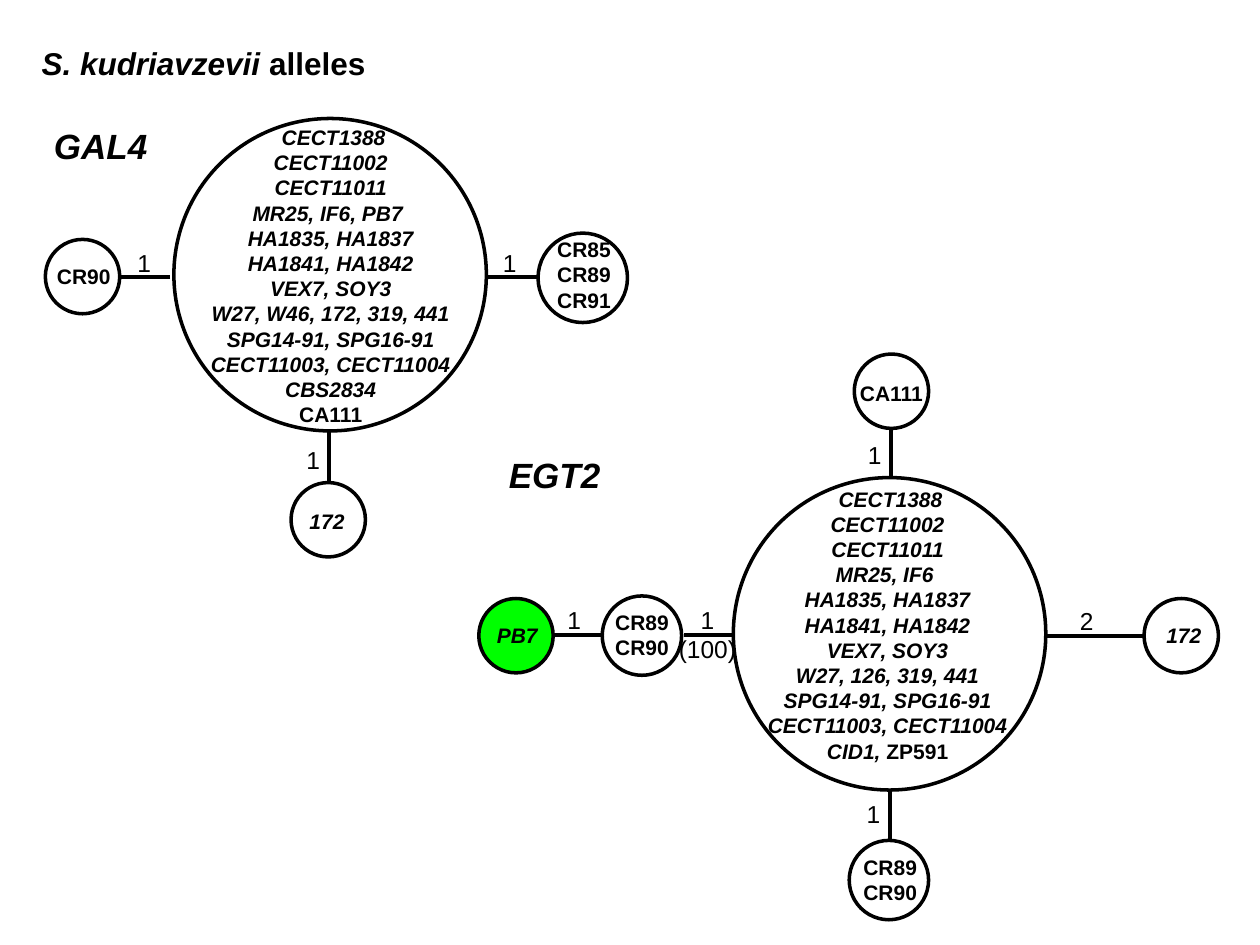
from dataclasses import dataclass

from lxml import etree
from pptx import Presentation
from pptx.dml.color import RGBColor
from pptx.enum.shapes import MSO_CONNECTOR, MSO_SHAPE
from pptx.enum.text import MSO_ANCHOR, MSO_AUTO_SIZE, PP_ALIGN
from pptx.oxml.ns import qn
from pptx.util import Inches, Pt

CIRCLE = MSO_SHAPE.OVAL
STRAIGHT = MSO_CONNECTOR.STRAIGHT
TOP = MSO_ANCHOR.TOP
FIXED_SIZE = MSO_AUTO_SIZE.NONE
LEFT, CENTER = PP_ALIGN.LEFT, PP_ALIGN.CENTER


@dataclass(frozen=True)
class Theme:
    font: str = "Arial"
    black: RGBColor = RGBColor(0, 0, 0)
    white: RGBColor = RGBColor(255, 255, 255)
    green: RGBColor = RGBColor(0, 255, 0)
    title: int = 18
    gene: int = 20
    strain: int = 12
    steps: int = 14
    outline: float = 2
    branch: float = 2.25


THEME = Theme()
HUB = 2.48
SMALL, MEDIUM, LARGE = 0.59, 0.63, 0.71  # circle diameters
LABEL_WIDTH, HUB_LABEL_WIDTH = 0.71, 2.17

SHARED_FIRST = [" CECT1388", "CECT11002", "CECT11011"]
SHARED_MIDDLE = ["HA1835, HA1837", "HA1841, HA1842", "VEX7, SOY3"]
SHARED_LAST = ["SPG14-91, SPG16-91", "CECT11003, CECT11004"]


def write(frame, lines, size, bold=True, italic=True, align=CENTER):
    """Fill a frame; a line is a string or a list of (text, italic) runs."""
    for index, line in enumerate(lines):
        paragraph = frame.paragraphs[0] if index == 0 else frame.add_paragraph()
        paragraph.alignment = align
        font = paragraph.font
        font.name, font.size = THEME.font, Pt(size)
        font.bold = bold
        font.color.rgb = THEME.black
        if isinstance(line, str):
            font.italic = italic
            paragraph.add_run().text = line
        else:
            for text, slanted in line:
                run = paragraph.add_run()
                run.text = text
                run.font.italic = slanted


def add_text(shapes, left, top, width, height, lines, size, **style):
    box = shapes.add_textbox(Inches(left), Inches(top), Inches(width), Inches(height))
    box.text_frame.word_wrap = True
    write(box.text_frame, lines, size, **style)


def add_gene(shapes, left, top, width, name):
    add_text(shapes, left, top, width, 0.44, [name], THEME.gene, align=LEFT)


def add_steps(shapes, left, top, text, width=0.73, height=0.34, align=CENTER):
    add_text(shapes, left, top, width, height, [text], THEME.steps,
             bold=False, italic=False, align=align)


def add_branch(shapes, x1, y1, x2, y2):
    branch = shapes.add_connector(STRAIGHT, Inches(x1), Inches(y1), Inches(x2), Inches(y2))
    branch.line.color.rgb = THEME.black
    branch.line.width = Pt(THEME.branch)
    etree.SubElement(branch._element.spPr, qn("a:effectLst"))


def add_allele(shapes, left, top, diameter, label_at, strains,
               fill=None, italic=False, label_width=LABEL_WIDTH):
    """Draw an allele circle and the list of strains that carry it."""
    circle = shapes.add_shape(CIRCLE, Inches(left), Inches(top),
                              Inches(diameter), Inches(diameter))
    circle.shadow.inherit = False
    if fill is None:
        circle.fill.background()
    else:
        circle.fill.solid()
        circle.fill.fore_color.rgb = fill
    circle.line.color.rgb = THEME.black
    circle.line.width = Pt(THEME.outline)
    add_text(shapes, *label_at, label_width, 0.1 + 0.2 * len(strains),
             strains, THEME.strain, italic=italic)


def add_hub(shapes, left, top, label_at, strains):
    add_allele(shapes, left, top, HUB, label_at, strains,
               fill=THEME.white, italic=True, label_width=HUB_LABEL_WIDTH)


def add_title(slide):
    title = slide.shapes.title
    title.left, title.top = Inches(0.23), Inches(0.3)
    title.width, title.height = Inches(2.89), Inches(0.4)
    frame = title.text_frame
    frame.auto_size = FIXED_SIZE
    frame.vertical_anchor = TOP
    write(frame, [[("S. kudriavzevii ", True), ("alleles", False)]],
          THEME.title, align=LEFT)


def add_gal4_network(shapes):
    add_gene(shapes, 0.33, 0.94, 1.07, "GAL4")
    add_hub(shapes, 1.38, 0.94, (1.54, 0.94),
            SHARED_FIRST + ["MR25, IF6, PB7 "] + SHARED_MIDDLE
            + ["W27, W46, 172, 319, 441"] + SHARED_LAST
            + ["CBS2834", [("CA111", False)]])

    # Left, right and lower alleles
    add_branch(shapes, 1.35, 2.2, 0.96, 2.2)
    add_steps(shapes, 0.78, 1.92, "1")
    add_allele(shapes, 0.36, 1.9, SMALL, (0.31, 2.04), ["CR90"])

    add_branch(shapes, 4.26, 2.2, 3.86, 2.2)
    add_steps(shapes, 3.68, 1.92, "1")
    add_allele(shapes, 4.27, 1.85, LARGE, (4.28, 1.83), ["CR85", "CR89", "CR91"])

    add_branch(shapes, 2.61, 3.83, 2.61, 3.43)
    add_steps(shapes, 1.92, 3.48, "1", width=1.13)
    add_allele(shapes, 2.31, 3.83, SMALL, (2.24, 3.99), ["172"],
               fill=THEME.white, italic=True)


def add_egt2_network(shapes):
    add_gene(shapes, 3.94, 3.55, 1.14, "EGT2")
    add_hub(shapes, 5.82, 3.79, (5.96, 3.81),
            SHARED_FIRST + ["MR25, IF6 "] + SHARED_MIDDLE
            + ["W27, 126, 319, 441"] + SHARED_LAST
            + [[("CID1, ", True), ("ZP591", False)]])

    # Upper and lower alleles
    add_branch(shapes, 7.07, 3.4, 7.07, 3.79)
    add_steps(shapes, 6.79, 3.44, "1", width=1.1, align=LEFT)
    add_allele(shapes, 6.78, 2.81, SMALL, (6.72, 2.97), ["CA111"])

    add_branch(shapes, 7.06, 6.26, 7.06, 6.66)
    add_steps(shapes, 6.78, 6.29, "1", width=1.1, align=LEFT)
    add_allele(shapes, 6.74, 6.67, MEDIUM, (6.71, 6.73), ["CR89", "CR90"])

    # Right allele
    add_branch(shapes, 9.09, 5.05, 8.3, 5.05)
    add_steps(shapes, 8.26, 4.76, "2")
    add_allele(shapes, 9.08, 4.75, SMALL, (9.04, 4.89), ["172"],
               fill=THEME.white, italic=True)

    # Chain of alleles on the left
    add_branch(shapes, 5.83, 5.04, 5.43, 5.04)
    add_steps(shapes, 5.25, 4.75, "1 (100)", height=0.57)
    add_allele(shapes, 4.78, 4.73, MEDIUM, (4.74, 4.79), ["CR89", "CR90"])

    add_branch(shapes, 4.77, 5.04, 4.38, 5.04)
    add_steps(shapes, 4.22, 4.75, "1 ")
    add_allele(shapes, 3.8, 4.75, SMALL, (3.75, 4.89), ["PB7"],
               fill=THEME.green, italic=True)


def main():
    deck = Presentation()
    deck.slide_width, deck.slide_height = Inches(10), Inches(7.5)
    slide = deck.slides.add_slide(deck.slide_layouts[5])
    add_title(slide)
    for add_network in (add_egt2_network, add_gal4_network):
        add_network(slide.shapes.add_group_shape().shapes)
    deck.save("out.pptx")


if __name__ == "__main__":
    main()
